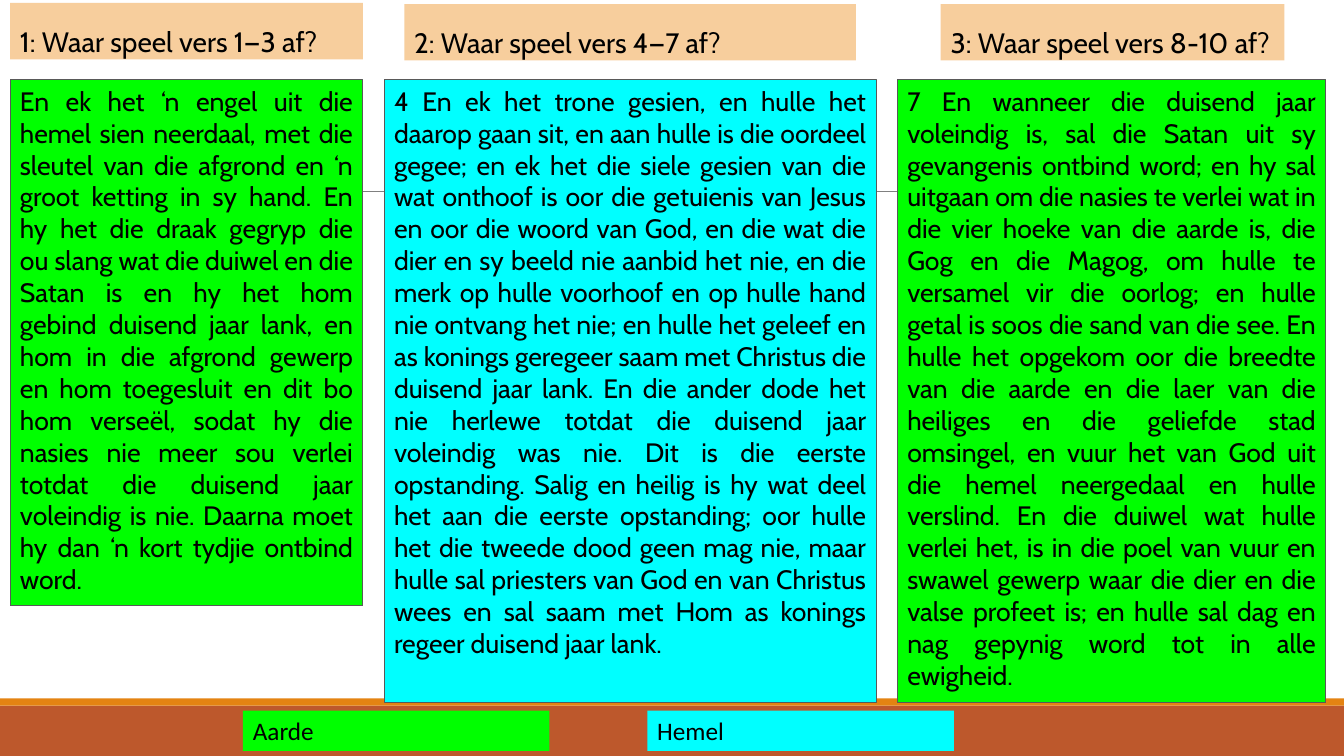
from pptx import Presentation
from pptx.dml.color import RGBColor
from pptx.enum.shapes import MSO_CONNECTOR, MSO_SHAPE
from pptx.enum.text import MSO_ANCHOR, PP_ALIGN
from pptx.oxml.ns import qn
from pptx.util import Inches, Pt
from lxml import etree

RECTANGLE = MSO_SHAPE.RECTANGLE
STRAIGHT = MSO_CONNECTOR.STRAIGHT
TOP = MSO_ANCHOR.TOP
LEFT, JUSTIFY = PP_ALIGN.LEFT, PP_ALIGN.JUSTIFY

BLACK = RGBColor(0x00, 0x00, 0x00)
RUST = RGBColor(0xBD, 0x58, 0x2C)
ORANGE = RGBColor(0xE4, 0x83, 0x12)
PEACH = RGBColor(0xF7, 0xCE, 0x9D)
EARTH_GREEN = RGBColor(0x00, 0xFF, 0x00)
HEAVEN_CYAN = RGBColor(0x00, 0xFF, 0xFF)
BORDER_GRAY = RGBColor(0x59, 0x59, 0x59)
RULE_GRAY = RGBColor(0x80, 0x80, 0x80)

WIDTH, HEIGHT = 13.33, 7.5
FOOTER_TOP, STRIPE_HEIGHT = 7, 0.07
RULE_LEFT, RULE_RIGHT, RULE_TOP = 1.31, 12.21, 1.9
HEADING_HEIGHT, PASSAGE_TOP = 0.56, 0.79
LEGEND_LEFT, LEGEND_STEP, LEGEND_TOP = 2.41, 4.01, 7.05
LEGEND_WIDTH, LEGEND_HEIGHT = 3.04, 0.4

HEADINGS = [
    ("1: Waar speel vers 1—3 af?", 0.1, 0.03, 3.5),
    ("2: Waar speel vers 4—7 af?", 4.01, 0.04, 4.48),
    ("3: Waar speel vers 8-10 af?", 9.33, 0.04, 3.41),
]
PASSAGES = [
    (
        "En ek het ‘n engel uit die hemel sien neerdaal, met die sleutel van die "
        "afgrond en ‘n groot ketting in sy hand. En hy het die draak gegryp die ou "
        "slang wat die duiwel en die Satan is en hy het hom gebind duisend jaar lank, "
        "en hom in die afgrond gewerp en hom toegesluit en dit bo hom verseël, sodat "
        "hy die nasies nie meer sou verlei totdat die duisend jaar voleindig is nie. "
        "Daarna moet hy dan ‘n kort tydjie ontbind word.",
        0.1, 3.5, 5.22, EARTH_GREEN,
    ),
    (
        "4 En ek het trone gesien, en hulle het daarop gaan sit, en aan hulle is die "
        "oordeel gegee; en ek het die siele gesien van die wat onthoof is oor die "
        "getuienis van Jesus en oor die woord van God, en die wat die dier en sy beeld "
        "nie aanbid het nie, en die merk op hulle voorhoof en op hulle hand nie ontvang "
        "het nie; en hulle het geleef en as konings geregeer saam met Christus die "
        "duisend jaar lank. En die ander dode het nie herlewe totdat die duisend jaar "
        "voleindig was nie. Dit is die eerste opstanding. Salig en heilig is hy wat deel "
        "het aan die eerste opstanding; oor hulle het die tweede dood geen mag nie, maar "
        "hulle sal priesters van God en van Christus wees en sal saam met Hom as konings "
        "regeer duisend jaar lank.",
        3.81, 4.88, 6.18, HEAVEN_CYAN,
    ),
    (
        "7 En wanneer die duisend jaar voleindig is, sal die Satan uit sy gevangenis "
        "ontbind word; en hy sal uitgaan om die nasies te verlei wat in die vier hoeke "
        "van die aarde is, die Gog en die Magog, om hulle te versamel vir die oorlog; en "
        "hulle getal is soos die sand van die see. En hulle het opgekom oor die breedte "
        "van die aarde en die laer van die heiliges en die geliefde stad omsingel, en "
        "vuur het van God uit die hemel neergedaal en hulle verslind. En die duiwel wat "
        "hulle verlei het, is in die poel van vuur en swawel gewerp waar die dier en die "
        "valse profeet is; en hulle sal dag en nag gepynig word tot in alle ewigheid.",
        8.9, 4.25, 6.18, EARTH_GREEN,
    ),
]
LEGEND = [("Aarde", EARTH_GREEN), ("Hemel", HEAVEN_CYAN)]

HEADING_FONT = {"name": "Cabin", "size": Pt(20)}
PASSAGE_FONT = {"name": "Cabin", "size": Pt(19)}
LEGEND_FONT = {"name": "Calibri", "size": Pt(18)}
HEADING_PARAGRAPH = {"alignment": JUSTIFY, "line_spacing": 1.5}
PASSAGE_PARAGRAPH = {"alignment": JUSTIFY, "space_after": Pt(3)}
LEGEND_PARAGRAPH = {"alignment": LEFT}


def set_attributes(target, values):
    for name, value in values.items():
        setattr(target, name, value)


def add_box(slide, left, top, width, height, color, border=None):
    shape = slide.shapes.add_shape(
        RECTANGLE, Inches(left), Inches(top), Inches(width), Inches(height)
    )
    shape.shadow.inherit = False
    shape.fill.solid()
    shape.fill.fore_color.rgb = color
    if border is None:
        shape.line.fill.background()
    else:
        shape.line.color.rgb = border
        shape.line.width = Pt(0.75)
    return shape


def write_text(shape, text, font_format, paragraph_format, **frame_format):
    frame = shape.text_frame
    set_attributes(frame, {"word_wrap": True, "vertical_anchor": TOP, **frame_format})
    paragraph = frame.paragraphs[0]
    set_attributes(paragraph, paragraph_format)
    run = paragraph.add_run()
    run.text = text
    set_attributes(run.font, font_format)
    run.font.color.rgb = BLACK


def add_background(slide):
    add_box(slide, 0, FOOTER_TOP, WIDTH, HEIGHT - FOOTER_TOP, RUST)
    add_box(slide, 0, FOOTER_TOP - STRIPE_HEIGHT, WIDTH, STRIPE_HEIGHT, ORANGE)
    rule = slide.shapes.add_connector(
        STRAIGHT, Inches(RULE_LEFT), Inches(RULE_TOP), Inches(RULE_RIGHT), Inches(RULE_TOP)
    )
    rule.line.color.rgb = RULE_GRAY
    rule.line.width = Pt(0.5)
    etree.SubElement(rule._element.spPr, qn("a:effectLst"))


def main():
    presentation = Presentation()
    presentation.slide_width = Inches(WIDTH)
    presentation.slide_height = Inches(HEIGHT)
    slide = presentation.slides.add_slide(presentation.slide_layouts[6])
    add_background(slide)

    for text, left, top, width in HEADINGS:
        heading = add_box(slide, left, top, width, HEADING_HEIGHT, PEACH)
        write_text(heading, text, HEADING_FONT, HEADING_PARAGRAPH, margin_right=0)

    for index, (text, color) in enumerate(LEGEND):
        left = LEGEND_LEFT + index * LEGEND_STEP
        label = add_box(slide, left, LEGEND_TOP, LEGEND_WIDTH, LEGEND_HEIGHT, color)
        write_text(label, text, LEGEND_FONT, LEGEND_PARAGRAPH)

    for text, left, width, height, color in PASSAGES:
        passage = add_box(slide, left, PASSAGE_TOP, width, height, color, BORDER_GRAY)
        write_text(passage, text, PASSAGE_FONT, PASSAGE_PARAGRAPH)

    presentation.save("out.pptx")


if __name__ == "__main__":
    main()
